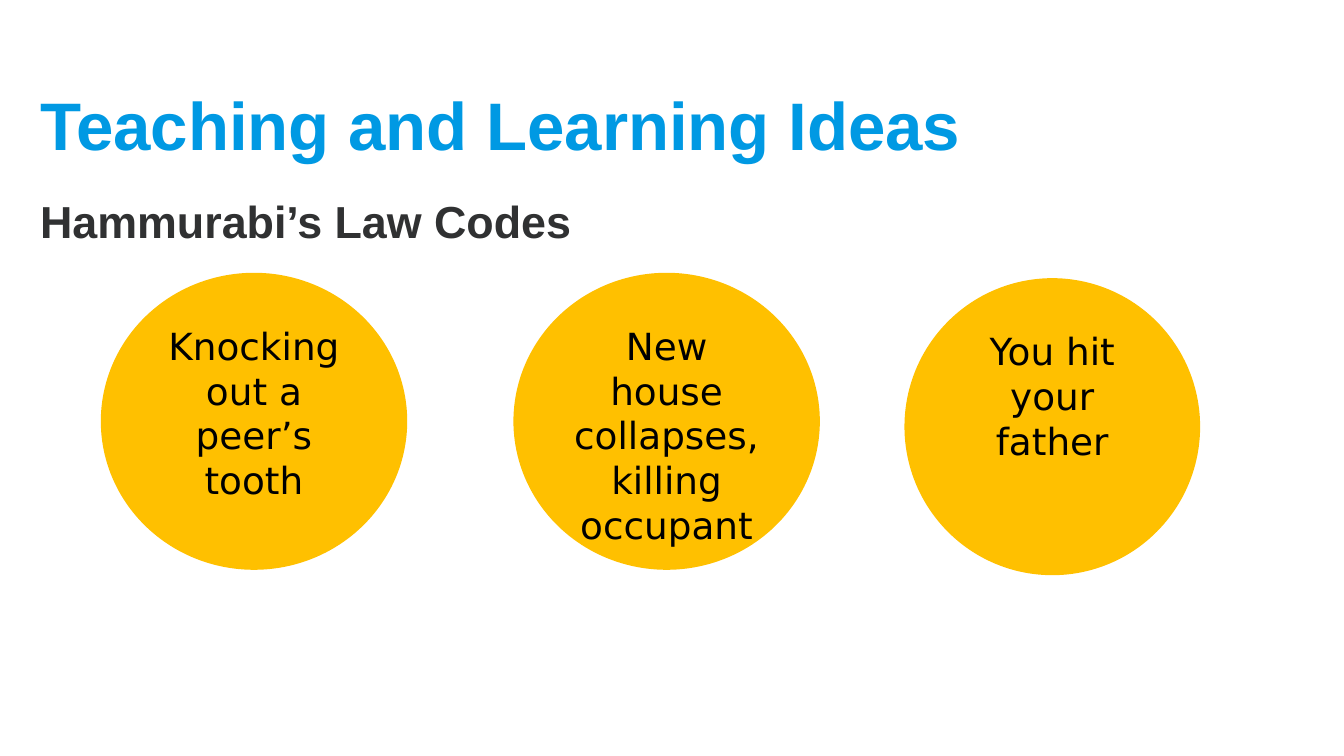
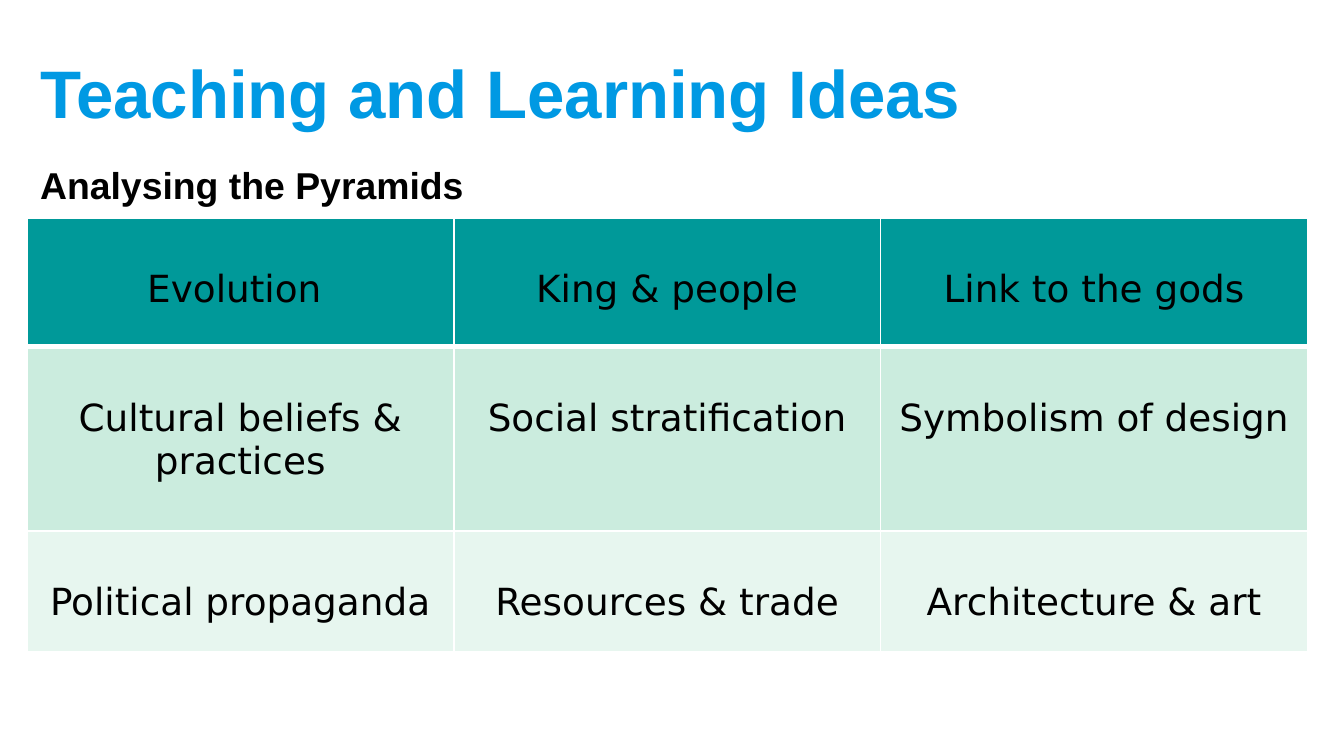
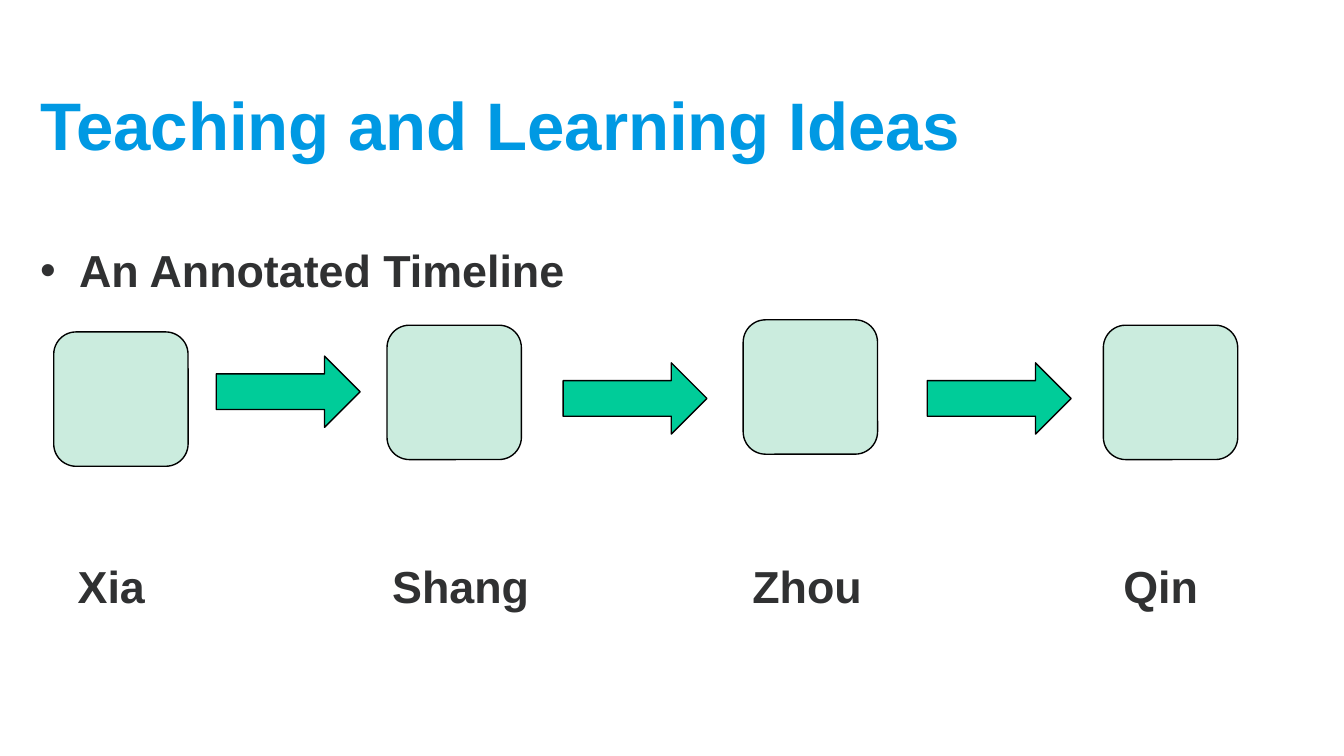
from lxml.etree import SubElement
from pptx import Presentation
from pptx.dml.color import RGBColor as Color
from pptx.enum.shapes import MSO_SHAPE as Shape
from pptx.enum.text import MSO_ANCHOR as Anchor, PP_ALIGN as Align
from pptx.oxml.ns import qn
from pptx.util import Inches, Pt

COLORS = {
    "title": "0099E3", "body": "303132", "text": "000000", "white": "FFFFFF",
    "circle": "FFC000", "header": "009999", "mint": "CBECDE",
    "pale": "E7F6EF", "arrow": "00CC99",
}
HEADING, PLAIN = "Arial", "DejaVu Sans"
LEFT, WIDTH = 0.2, 9.53


def style(para, size, color, face=HEADING, bold=True):
    for span in para.runs:
        span.font.size = Pt(size)
        span.font.name = face
        span.font.bold = bold
        span.font.color.rgb = Color.from_string(COLORS[color])


def add_box(page, kind, place, fill=None, line=None):
    """Add a text box (kind None) or a flat preset shape."""
    place = [Inches(length) for length in place]
    if kind is None:
        box = page.shapes.add_textbox(*place)
    else:
        box = page.shapes.add_shape(kind, *place)
        box.shadow.inherit = False
        box.fill.solid()
        box.fill.fore_color.rgb = Color.from_string(COLORS[fill])
        if line:
            box.line.color.rgb = Color.from_string(COLORS[line])
            box.line.width = Pt(0.75)
        else:
            box.line.fill.background()
    box.text_frame.word_wrap = True
    return box


# Widescreen deck, 16:9
deck = Presentation()
deck.slide_width = Inches(10)
deck.slide_height = deck.slide_width * 9 // 16

# Title shared by all slides
pages, titles = [], []
for height in (0.94, 1.07, 0.94):
    page = deck.slides.add_slide(deck.slide_layouts[6])
    title = add_box(page, None, (LEFT, 0.45, WIDTH, height))
    title.text_frame.vertical_anchor = Anchor.MIDDLE
    title.text_frame.text = "Teaching and Learning Ideas"
    style(title.text_frame.paragraphs[0], 36, "title")
    pages.append(page)
    titles.append(title)
laws, pyramids, timeline = pages

# Slide 1: law codes
body = add_box(laws, None, (LEFT, 1.39, WIDTH, 3.49))
body.text_frame.text = "Hammurabi’s Law Codes"
style(body.text_frame.paragraphs[0], 24, "body")

for left, top, width, offence in (
    (0.75, 2.03, 2.28, "Knocking out a peer’s tooth"),
    (3.82, 2.03, 2.28, "New house collapses, killing occupant"),
    (6.73, 2.07, 2.2, "You hit your father"),
):
    circle = add_box(laws, Shape.OVAL, (left, top, width, 2.21), "circle")
    circle.text_frame.vertical_anchor = Anchor.TOP
    circle.text_frame.text = offence
    para = circle.text_frame.paragraphs[0]
    para.alignment = Align.CENTER
    style(para, 20, "text", PLAIN, False)

# Slide 2: subtitle on the second title line
para = titles[1].text_frame.paragraphs[0]
para.add_line_break()
for words, size in (("Analysing the Pyramids", 20), (" ", 36)):
    span = para.add_run()
    span.text = words
    span.font.size = Pt(size)
    span.font.name = HEADING
    span.font.bold = True
    span.font.color.rgb = Color.from_string(COLORS["text"])

# Slide 2: table of themes
rows = (
    (0.96, "header", ("Evolution ", "King & people", "Link to the gods")),
    (1.37, "mint", ("Cultural beliefs & practices", "Social stratification",
                    "Symbolism of design")),
    (0.9, "pale", ("Political propaganda", "Resources & trade",
                   "Architecture & art")),
)
table = pyramids.shapes.add_table(
    3, 3, Inches(LEFT), Inches(1.62), Inches(WIDTH), Inches(3.23)).table
for column in table.columns:
    column.width = Inches(WIDTH / 3)
for r, (height, fill, themes) in enumerate(rows):
    table.rows[r].height = Inches(height)
    for c, theme in enumerate(themes):
        cell = table.cell(r, c)
        cell.margin_top = Inches(0.37)
        cell.text_frame.text = theme
        para = cell.text_frame.paragraphs[0]
        para.alignment = Align.CENTER
        style(para, 20, "text", PLAIN, False)
        cell_props = cell._tc.get_or_add_tcPr()
        for side in "LRTB":
            thick = (side == "B" and r == 0) or (side == "T" and r == 1)
            border = SubElement(cell_props, qn(f"a:ln{side}"),
                                w=str(Pt(3 if thick else 1)))
            paint = SubElement(border, qn("a:solidFill"))
            SubElement(paint, qn("a:srgbClr"), val=COLORS["white"])
        cell.fill.solid()
        cell.fill.fore_color.rgb = Color.from_string(COLORS[fill])

# Slide 3: heading and dynasty names
body = add_box(timeline, None, (LEFT, 1.76, WIDTH, 3.25))
body.text_frame.text = "An Annotated Timeline"
heading = body.text_frame.paragraphs[0]
heading_props = heading._p.get_or_add_pPr()
heading_props.set("marL", str(Inches(0.29)))
heading_props.set("indent", str(-Inches(0.29)))
SubElement(heading_props, qn("a:buFont"), typeface=HEADING)
SubElement(heading_props, qn("a:buChar"), char="•")

names = body.text_frame.add_paragraph()
names.text = "\tXia\tShang\tZhou\tQin"
tabs = SubElement(names._p.get_or_add_pPr(), qn("a:tabLst"))
for stop in (0.28, 2.62, 5.3, 8.06):
    SubElement(tabs, qn("a:tab"), pos=str(Inches(stop)), algn="l")
names.space_before = Pt(140)
for para in (heading, names):
    style(para, 24, "body")

# Slide 3: stages and the arrows between them
for left, top in ((0.4, 2.47), (2.88, 2.42), (5.53, 2.38), (8.21, 2.42)):
    add_box(timeline, Shape.ROUNDED_RECTANGLE, (left, top, 1, 1), "mint", "text")
for left, top in ((1.61, 2.65), (4.19, 2.7), (6.9, 2.7)):
    add_box(timeline, Shape.RIGHT_ARROW, (left, top, 1.07, 0.53), "arrow", "text")

deck.save("out.pptx")
